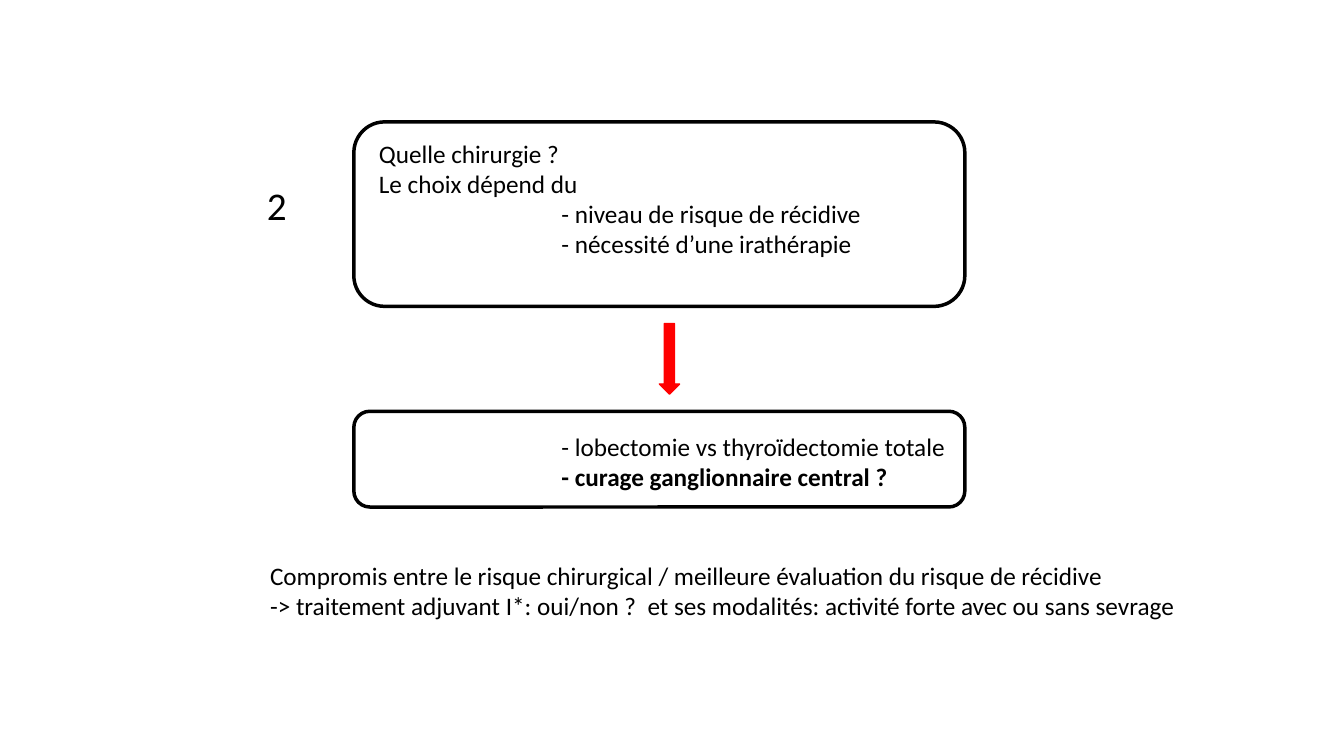
from pptx import Presentation
from pptx.dml.color import RGBColor as Rgb
from pptx.enum.shapes import MSO_SHAPE as Kind
from pptx.enum.text import MSO_AUTO_SIZE as Fit
from pptx.util import Inches, Pt

WIDE, HIGH = 13.33, 7.5
HUES = {"ink": "000000", "arrow": "FF0000"}
FONT = "Calibri"
LEFT, SPAN = 3.51, 6.06
INDENT = 5.47
ROW = 0.3

TEXTS = [
    (3.66, 1.32, 2.2, 18, ["Quelle chirurgie ?", "Le choix dépend du"]),
    (INDENT, 1.32 + 2 * ROW, 3.21, 18, ["- niveau de risque de récidive"]),
    (INDENT, 1.32 + 3 * ROW, 3.11, 18, ["- nécessité d’une irathérapie"]),
    (INDENT, 4.23, 4.1, 18, ["- lobectomie vs thyroïdectomie totale",
                             "- curage ganglionnaire central ?"]),
    (2.55, 1.75, 0.4, 28, ["2"]),
    (2.58, 5.51, 9.28, 18, [
        "Compromis entre le risque chirurgical / meilleure évaluation du risque de récidive",
        "-> traitement adjuvant I*: oui/non ?  et ses modalités: activité forte avec ou sans sevrage",
    ]),
]
BOLD = {"- curage ganglionnaire central ?"}

SHAPES = [
    (Kind.ROUNDED_RECTANGLE, LEFT, 1.21, SPAN, 1.83, None, "ink", 2.5),
    (Kind.ROUNDED_RECTANGLE, LEFT, 4.08, SPAN, 0.95, None, "ink", 2.5),
    (Kind.DOWN_ARROW, LEFT + SPAN / 2, 3.21, 0.2, 0.7, "arrow", "arrow", 1),
]


def hue(name):
    return Rgb.from_string(HUES[name])


def add_text(slide, left, top, width, size, lines):
    high = 0.1 + len(lines) * size / 60
    box = slide.shapes.add_textbox(*map(Inches, (left, top, width, high)))
    frame = box.text_frame
    frame.text = "\n".join(lines)
    frame.word_wrap = False
    frame.auto_size = Fit.SHAPE_TO_FIT_TEXT
    for para in frame.paragraphs:
        font = para.font
        font.name, font.size = FONT, Pt(size)
        font.bold = para.text in BOLD
        font.color.rgb = hue("ink")


def add_shape(slide, kind, left, top, width, high, fill, line, weight):
    shape = slide.shapes.add_shape(kind, *map(Inches, (left, top, width, high)))
    shape.shadow.inherit = False
    if fill:
        shape.fill.solid()
        shape.fill.fore_color.rgb = hue(fill)
    else:
        shape.fill.background()
    shape.line.color.rgb = hue(line)
    shape.line.width = Pt(weight)


def main():
    deck = Presentation()
    deck.slide_width, deck.slide_height = Inches(WIDE), Inches(HIGH)
    slide = deck.slides.add_slide(deck.slide_layouts[6])
    for item in TEXTS:
        add_text(slide, *item)
    for item in SHAPES:
        add_shape(slide, *item)
    deck.save("out.pptx")


if __name__ == "__main__":
    main()
